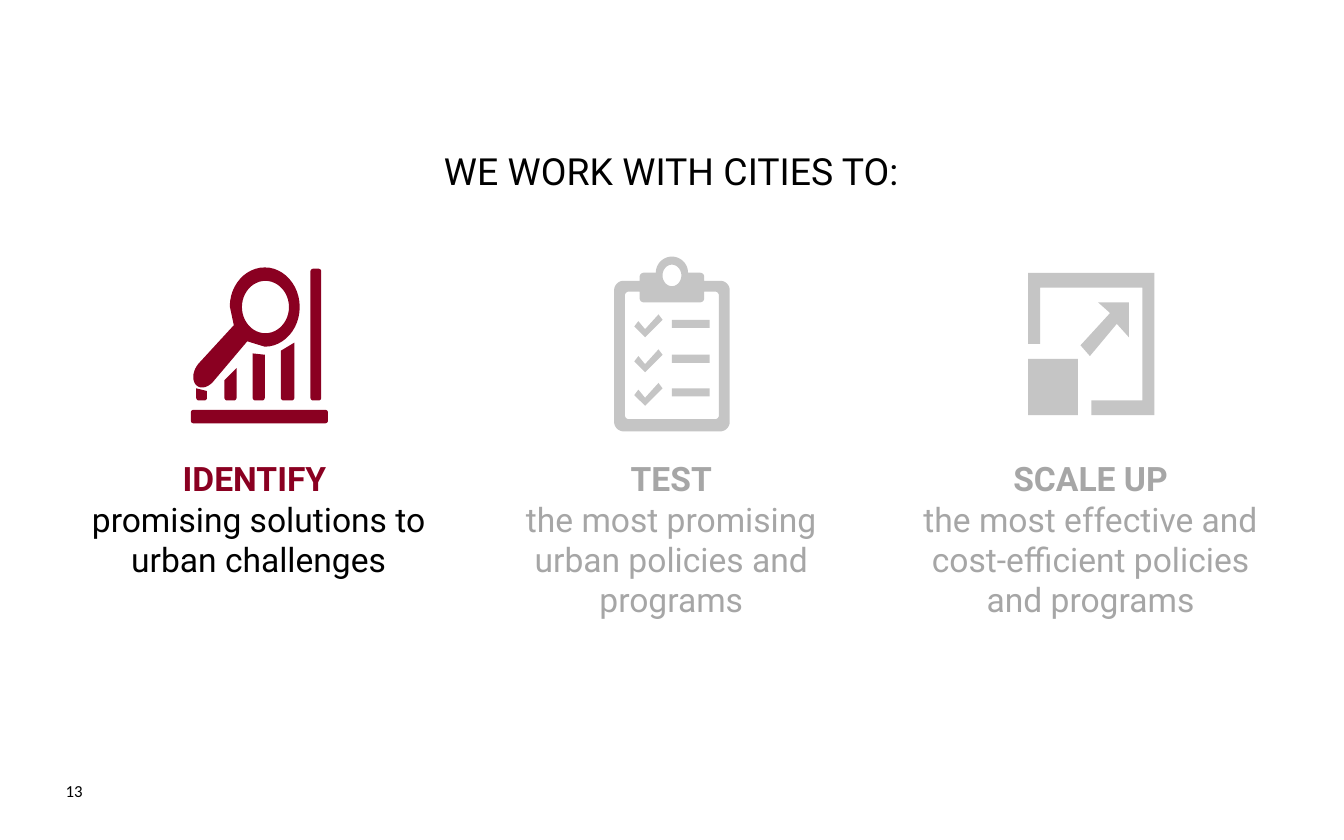
from math import dist
from lxml.etree import SubElement as Sub
from pptx import Presentation
from pptx.dml.color import RGBColor as RGB
from pptx.enum.text import MSO_ANCHOR as Anchor, MSO_AUTO_SIZE as Fit, PP_ALIGN as Align
from pptx.oxml.ns import qn
from pptx.util import Pt

PX = 9144  # 100 px to the inch
RED, BLACK, GREY, DARK = "8A0021", "000000", "A6A6A6", "595959"
STEPS = 12  # line segments per rounded corner


def color(code):
    return RGB.from_string(code)


def put(para, text, size=18, font="Roboto", ink=BLACK, bold=False, align=Align.CENTER):
    para.alignment = align
    run = para.add_run()
    run.text = text
    run.font.size, run.font.name, run.font.bold = Pt(size), font, bold
    run.font.color.rgb = color(ink)


def mix(a, b, t):
    return tuple(p + (q - p) * t for p, q in zip(a, b))


def curve(a, corner, b):
    """Points of a quarter-ellipse-like arc from a to b, bulging to the corner."""
    c, d = mix(a, corner, 0.55), mix(b, corner, 0.55)
    for i in range(STEPS + 1):
        t = i / STEPS
        u = 1 - t
        yield tuple(u**3 * p + 3 * u * u * t * q + 3 * u * t * t * r + t**3 * s
                    for p, q, r, s in zip(a, c, d, b))


def outline(nodes):
    """Turn (x, y) corners and (x, y, radius) rounded corners into points.

    A radius stops at the next sharp corner, or halfway to a rounded one."""
    out = []
    for i, (x, y, *rad) in enumerate(nodes):
        if not rad:
            out.append((x, y))
            continue
        ends = []
        for near in (nodes[i - 1], nodes[(i + 1) % len(nodes)]):
            span = dist((x, y), near[:2])
            room = span / 2 if len(near) > 2 else span
            ends.append(mix((x, y), near[:2], min(rad[0], room) / span))
        out.extend(curve(ends[0], (x, y), ends[1]))
    return out


def box(left, top, right, low, rad=0):
    tail = (rad,) if rad else ()
    return [(x, y) + tail for x, y in
            ((left, top), (right, top), (right, low), (left, low))]


def shift(nodes, down):
    return [(x, y + down) for x, y in nodes]


class Deck:
    def __init__(self, wide, high):
        self.prs = Presentation()
        self.prs.slide_width, self.prs.slide_height = wide * PX, high * PX
        self.slide = self.prs.slides.add_slide(self.prs.slide_layouts[5])

    def title(self, text, left, top, wide, high):
        head = self.slide.shapes.title
        head.left, head.top, head.width, head.height = (
            n * PX for n in (left, top, wide, high))
        frame = head.text_frame
        frame.auto_size, frame.vertical_anchor = Fit.NONE, Anchor.TOP
        put(frame.paragraphs[0], text, size=20)

    def text(self, lines, left, top, wide, high, wrap=True):
        """Add a text box; lines holds (text, format) pairs, one a paragraph."""
        frame = self.slide.shapes.add_textbox(
            *(n * PX for n in (left, top, wide, high))).text_frame
        frame.word_wrap = wrap
        for i, (words, look) in enumerate(lines):
            put(frame.add_paragraph() if i else frame.paragraphs[0], words, **look)

    def icon(self, parts, ink, alpha=100):
        """Draw all outlines as one shape; an outline inside another is a hole."""
        pen = None
        for part in parts:
            first, *rest = [(x * PX, y * PX) for x, y in outline(part)]
            if pen is None:
                pen = self.slide.shapes.build_freeform(*first, scale=1.0)
            else:
                pen.move_to(*first)
            pen.add_line_segments(rest, close=True)
        shape = pen.convert_to_shape()
        shape.shadow.inherit = False
        shape.line.fill.background()
        shape.fill.solid()
        shape.fill.fore_color.rgb = color(ink)
        if alpha < 100:
            tint = shape.fill._xPr.find(qn("a:solidFill"))[0]
            Sub(tint, qn("a:alpha")).set("val", str(alpha * 1000))


def chart_icon():
    lens = [(184, 254), (197, 258), (223, 258, 99), (223, 199, 99), (171, 199, 99),
            (171, 228), (174, 242), (140, 279, 12), (151, 293, 12)]
    return [
        lens,
        box(180, 209, 215, 248, 99),
        box(231, 200, 239, 298, 2),
        box(142, 305, 244, 315, 2),
        [(146, 289), (154, 291), (154, 298, 2), (146, 298, 2)],
        [(167, 283), (176, 274), (176, 298, 2), (167, 298, 2)],
        [(188, 263), (197, 264), (197, 298, 2), (188, 298, 2)],
        [(209, 261), (219, 255), (219, 298, 2), (209, 298, 2)],
    ]


def list_icon():
    board = [(476, 209), (476, 203, 3), (488, 203), (488, 191, 12), (512, 191, 12),
             (512, 203), (524, 203, 3), (524, 209), (543, 209, 7), (543, 321, 7),
             (457, 321, 7), (457, 209, 7)]
    page = [(476, 217), (476, 225, 3), (524, 225, 3), (524, 217), (535, 217, 3),
            (535, 312, 3), (465, 312, 3), (465, 217, 3)]
    tick = [(480, 245), (475, 239), (472, 243), (480, 251), (493, 238), (490, 234)]
    parts = [board, box(493, 197, 507, 213, 99), page]
    for down in (0, 26, 51):
        parts += [shift(tick, down), shift(box(500, 238, 528, 244), down)]
    return parts


def scale_icon():
    frame = [(765, 203), (765, 256), (774, 256), (774, 214), (850, 214), (850, 298),
             (812, 298), (812, 309), (859, 309), (859, 203)]
    arrow = [(840, 251), (840, 225), (817, 225), (826, 233), (804, 257), (811, 265),
             (831, 241)]
    return [frame, arrow, box(765, 267, 802, 309)]


def main():
    deck = Deck(1000, 625)
    deck.title("WE WORK WITH CITIES TO:", 304, 105, 391, 44)
    steps = [
        (49, chart_icon(), RED, 100, "IDENTIFY ", RED, BLACK,
         "promising solutions to urban challenges"),
        (356, list_icon(), DARK, 35, "TEST", GREY, GREY,
         "the most promising urban policies and programs"),
        (668, scale_icon(), DARK, 35, "SCALE UP", GREY, GREY,
         "the most effective and cost-efficient policies and programs"),
    ]
    for left, parts, fill, alpha, name, top, low, words in steps:
        deck.icon(parts, fill, alpha)
        deck.text([(name, dict(ink=top, bold=True)), (words, dict(ink=low))],
                  left, 336, 287, 131)
    deck.text([("13", dict(size=9, font="Calibri", align=Align.LEFT))],
              39, 576, 36, 25, wrap=False)
    deck.prs.save("out.pptx")


if __name__ == "__main__":
    main()
